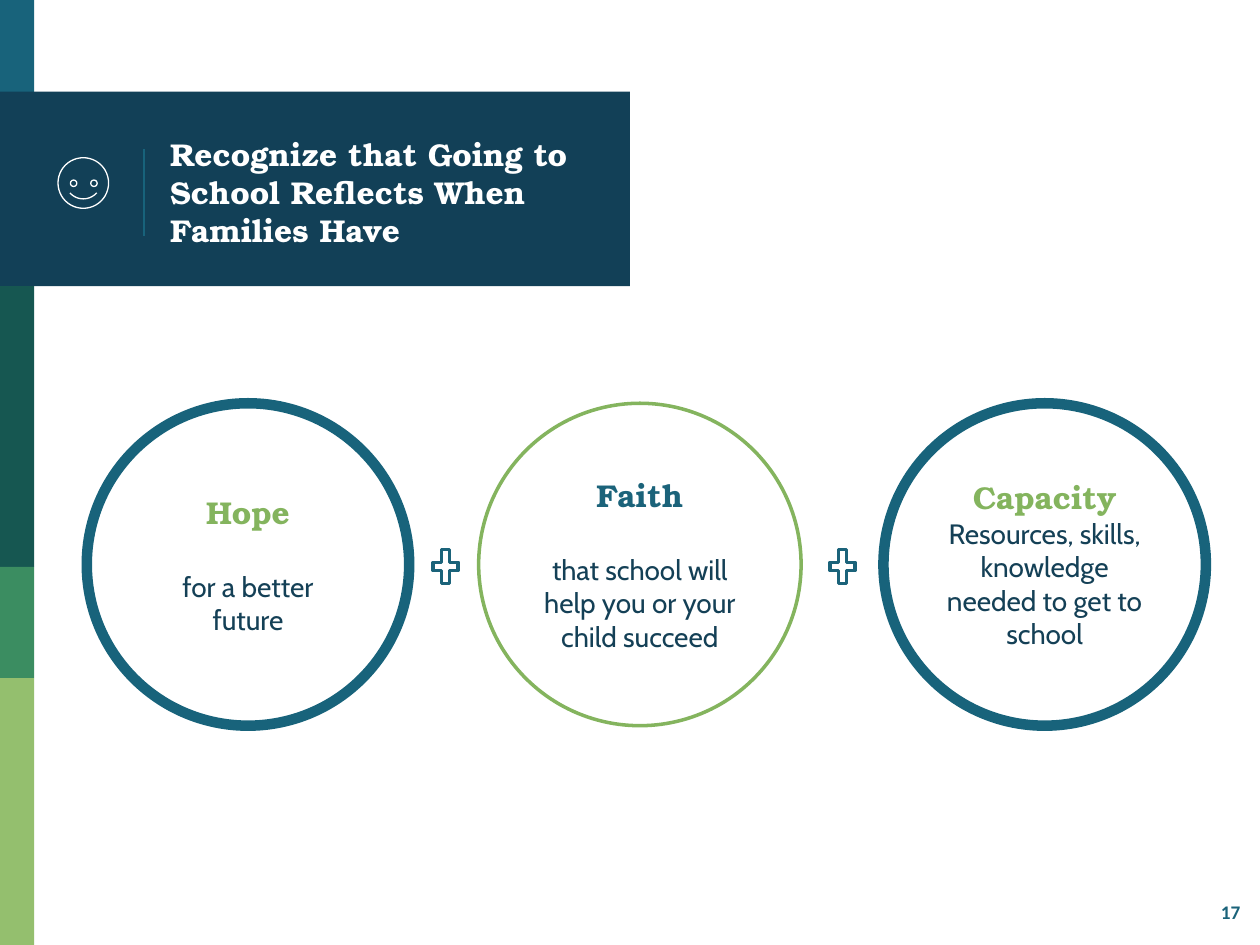
from math import asin, cos, sin

from lxml import etree
from pptx import Presentation
from pptx.dml.color import RGBColor
from pptx.enum.shapes import MSO_CONNECTOR, MSO_SHAPE
from pptx.enum.text import MSO_ANCHOR, MSO_AUTO_SIZE, PP_ALIGN
from pptx.oxml.ns import qn
from pptx.util import Cm, Pt

RECT, OVAL, PLUS = MSO_SHAPE.RECTANGLE, MSO_SHAPE.OVAL, MSO_SHAPE.MATH_PLUS
STRAIGHT = MSO_CONNECTOR.STRAIGHT
MIDDLE, LEFT, CENTER = MSO_ANCHOR.MIDDLE, PP_ALIGN.LEFT, PP_ALIGN.CENTER
NO_FIT = MSO_AUTO_SIZE.NONE

SERIF, SANS = "TeX Gyre Bonum", "Cabin"
WHITE, NAVY, INK = "FFFFFF", "124057", "144056"
BLUE, TEAL, GREEN = "18637B", "1B637A", "84B45E"


def style(sp, fill=None, line=None, width=0.75):
    sp.shadow.inherit = False
    if fill:
        sp.fill.solid()
        sp.fill.fore_color.rgb = RGBColor.from_string(fill)
    else:
        sp.fill.background()
    if line:
        sp.line.color.rgb = RGBColor.from_string(line)
        sp.line.width = Pt(width)
    else:
        sp.line.fill.background()


def write(p, text, font=SERIF, size=18, color=WHITE, bold=True, align=LEFT, after=0):
    p.alignment = align
    p.space_after = Pt(after)
    r = p.add_run()
    r.text = text
    r.font.name = font
    r.font.size = Pt(size)
    r.font.bold = bold
    r.font.color.rgb = RGBColor.from_string(color)


prs = Presentation()
prs.slide_width, prs.slide_height = Cm(25.4), Cm(19.05)
s = prs.slides.add_slide(prs.slide_layouts[5])
shapes = s.shapes

bands = [
    (0, 1.95, 0.69, BLUE),
    (1.85, 5.77, 12.7, NAVY),
    (5.77, 11.43, 0.69, "165751"),
    (11.43, 13.67, 0.69, "3B8D61"),
    (13.67, 19.05, 0.69, "94BF6E"),
]
for top, bottom, w, color in bands:
    style(shapes.add_shape(RECT, 0, Cm(top), Cm(w), Cm(bottom - top)), color)

divider = shapes.add_connector(STRAIGHT, Cm(2.9), Cm(3), Cm(2.9), Cm(4.75))
divider.line.color.rgb = RGBColor.from_string(BLUE)
divider.line.width = Pt(0.75)
etree.SubElement(divider._element.spPr, qn("a:effectLst"))

title = shapes.title
title.left, title.top, title.width, title.height = Cm(3.18), Cm(1.96), Cm(8.92), Cm(3.81)
shapes._spTree.append(title._element)
tf = title.text_frame
tf.auto_size, tf.word_wrap, tf.vertical_anchor = NO_FIT, True, MIDDLE
tf.margin_left = tf.margin_right = tf.margin_top = tf.margin_bottom = Cm(0.25)
write(tf.paragraphs[0], "Recognize that Going to School Reflects When Families Have")

for x, y, d in [(1.17, 3.18, 1.02), (1.42, 3.63, 0.13), (1.83, 3.63, 0.13)]:
    style(shapes.add_shape(OVAL, Cm(x), Cm(y), Cm(d), Cm(d)), line=WHITE)

cx, bottom, half, depth = 1.68, 4.01, 0.27, 0.12
radius = (half ** 2 + depth ** 2) / (2 * depth)
angles = [asin(half / radius) * i / 8 for i in range(-8, 9)]
arc = [(Cm(cx + radius * sin(a)), Cm(bottom - radius * (1 - cos(a)))) for a in angles]
smile = shapes.build_freeform(*arc[0])
smile.add_line_segments(arc[1:], close=False)
style(smile.convert_to_shape(), line=WHITE)

for x in (8.64, 16.64):
    style(shapes.add_shape(PLUS, Cm(x), Cm(10.95), Cm(0.69), Cm(0.94)), WHITE, TEAL, 2)

circles = [
    (17.81, "Capacity", "Resources, skills, knowledge needed to get to school", GREEN, None, BLUE, 6, 0),
    (1.75, "Hope", "for a better future", GREEN, None, BLUE, 6, 22),
    (9.65, "Faith", "that school will help you or your child succeed", TEAL, WHITE, GREEN, 2, 22),
]
for x, head, body, color, fill, line, width, gap in circles:
    sp = shapes.add_shape(OVAL, Cm(x), Cm(8.13), Cm(6.5), Cm(6.5))
    style(sp, fill, line, width)
    tf = sp.text_frame
    tf.word_wrap, tf.vertical_anchor = True, MIDDLE
    tf.margin_left = tf.margin_right = tf.margin_top = tf.margin_bottom = Cm(0.25)
    write(tf.paragraphs[0], head, color=color, align=CENTER, after=gap)
    write(tf.add_paragraph(), body, font=SANS, size=16, color=INK, bold=False, align=CENTER)

number = shapes.add_textbox(Cm(24.36), Cm(18.03), Cm(1.04), Cm(0.74))
write(number.text_frame.paragraphs[0], "17", font="Calibri", size=11, color=TEAL)

prs.save("out.pptx")
